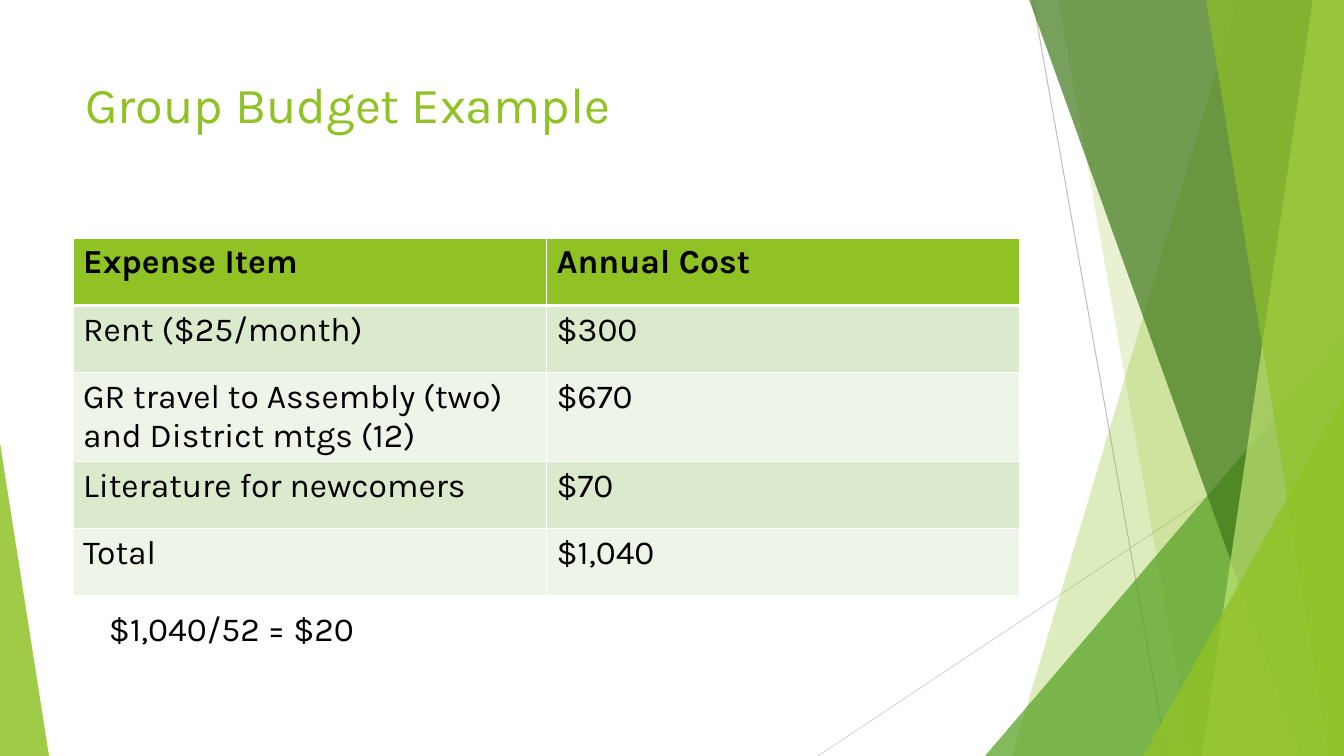
from lxml.etree import SubElement
from pptx import Presentation
from pptx.dml.color import RGBColor
from pptx.enum.shapes import MSO_CONNECTOR as Connector, MSO_SHAPE as Shape
from pptx.enum.text import MSO_ANCHOR as Anchor, MSO_AUTO_SIZE as AutoSize, PP_ALIGN as Align
from pptx.oxml.ns import qn
from pptx.util import Emu, Pt

# Content
TITLE = "Group Budget Example"
BUDGET = [
    ("Expense Item", "Annual Cost"),
    ("Rent ($25/month)", "$300"),
    ("GR travel to Assembly (two) and District mtgs (12)", "$670"),
    ("Literature for newcomers", "$70"),
    ("Total", "$1,040"),
]
WEEKLY_SHARE = "$1,040/52 = $20"

# Colours and font
LIME = RGBColor(0x90, 0xC2, 0x26)
PALE_LIME = RGBColor(0xC0, 0xE4, 0x74)
GREEN = RGBColor(0x54, 0xA0, 0x21)
DARK_GREEN = RGBColor(0x3F, 0x78, 0x19)
BAND_DARK = RGBColor(0xDB, 0xE9, 0xCD)
BAND_LIGHT = RGBColor(0xEE, 0xF4, 0xE8)
GREY = RGBColor(0xBF, 0xBF, 0xBF)
LIGHT_GREY = RGBColor(0xD9, 0xD9, 0xD9)
BLACK = RGBColor(0, 0, 0)
FONT = "Karla"

# Geometry in px
WIDTH, HEIGHT = 1344, 756
SCALE = 12192000 / WIDTH
TITLE_BOX = (75, 68, 947, 145)
TABLE_BOX = (73, 238, 947, 337)
SHARE_BOX = (99, 603, 745, 50)
LINES = [((1033, 0), (1167, HEIGHT), GREY), ((WIDTH, 406), (818, HEIGHT), LIGHT_GREY)]

# Facets from back to front: bands give the x of their slanted left edge at
# top and bottom, triangles give left, top, right and apex position
FACETS = [
    ("band", (1238, 1012), LIME, 30),
    ("band", (1058, 1192), LIME, 20),
    ("triangle", (985, 336, WIDTH, 1), GREEN, 72),
    ("band", (1029, 1301), DARK_GREEN, 70),
    ("band", (1313, 1202), PALE_LIME, 70),
    ("band", (1206, 1329), LIME, 65),
    ("triangle", (1143, 396, WIDTH, 1), LIME, 80),
    ("triangle", (0, 443, 49, 0), LIME, 85),
]


def px(*lengths):
    return [Emu(round(length * SCALE)) for length in lengths]


def write(frame, text, size=24, color=BLACK, bold=False):
    para = frame.paragraphs[0]
    para.alignment = Align.LEFT
    span = para.add_run()
    span.text = text
    span.font.name, span.font.size = FONT, Pt(size)
    span.font.bold, span.font.color.rgb = bold, color


def add_line(shapes, start, end, color):
    line = shapes.add_connector(Connector.STRAIGHT, *px(*start, *end))
    line.line.color.rgb, line.line.width = color, Pt(0.75)
    SubElement(line._element.spPr, qn("a:effectLst"))


def add_facet(shapes, kind, place, color, opacity):
    if kind == "band":
        top, bottom = place
        builder = shapes.build_freeform(top, -1, SCALE)
        builder.add_line_segments([(WIDTH, -1), (WIDTH, HEIGHT), (bottom, HEIGHT)])
        facet = builder.convert_to_shape()
    else:
        left, top, right, apex = place
        facet = shapes.add_shape(Shape.ISOSCELES_TRIANGLE,
                                 *px(left, top, right - left, HEIGHT - top))
        facet.adjustments[0] = apex
    facet.shadow.inherit = False
    facet.line.fill.background()
    facet.fill.solid()
    facet.fill.fore_color.rgb = color
    tint = facet._element.spPr.find(qn("a:solidFill"))[0]
    SubElement(tint, qn("a:alpha"), val=str(opacity * 1000))


def add_borders(cell, bottom_width):
    properties = cell._tc.get_or_add_tcPr()
    for side, width in zip("LRTB", (1, 1, 1, bottom_width)):
        border = SubElement(properties, qn(f"a:ln{side}"), w=str(Pt(width)))
        SubElement(SubElement(border, qn("a:solidFill")), qn("a:srgbClr"), val="FFFFFF")


def add_budget(shapes):
    table = shapes.add_table(len(BUDGET), len(BUDGET[0]), *px(*TABLE_BOX)).table
    for row, texts in enumerate(BUDGET):
        header = row == 0
        fill = LIME if header else (BAND_LIGHT, BAND_DARK)[row % 2]
        for column, text in enumerate(texts):
            cell = table.cell(row, column)
            add_borders(cell, 3 if header else 1)
            cell.fill.solid()
            cell.fill.fore_color.rgb = fill
            write(cell.text_frame, text, bold=header)


def main():
    deck = Presentation()
    deck.slide_width, deck.slide_height = px(WIDTH, HEIGHT)
    page = deck.slides.add_slide(deck.slide_layouts[5])
    shapes = page.shapes

    # Background decoration
    for line in LINES:
        add_line(shapes, *line)
    for facet in FACETS:
        add_facet(shapes, *facet)

    # Title
    title = shapes.title
    title.left, title.top, title.width, title.height = px(*TITLE_BOX)
    title.text_frame.vertical_anchor = Anchor.TOP
    title.text_frame.auto_size = AutoSize.NONE
    write(title.text_frame, TITLE, size=36, color=LIME)

    # Budget table and weekly share
    add_budget(shapes)
    share = shapes.add_textbox(*px(*SHARE_BOX))
    share.text_frame.word_wrap = True
    share.text_frame.auto_size = AutoSize.SHAPE_TO_FIT_TEXT
    write(share.text_frame, WEEKLY_SHARE)

    deck.save("out.pptx")


if __name__ == "__main__":
    main()
